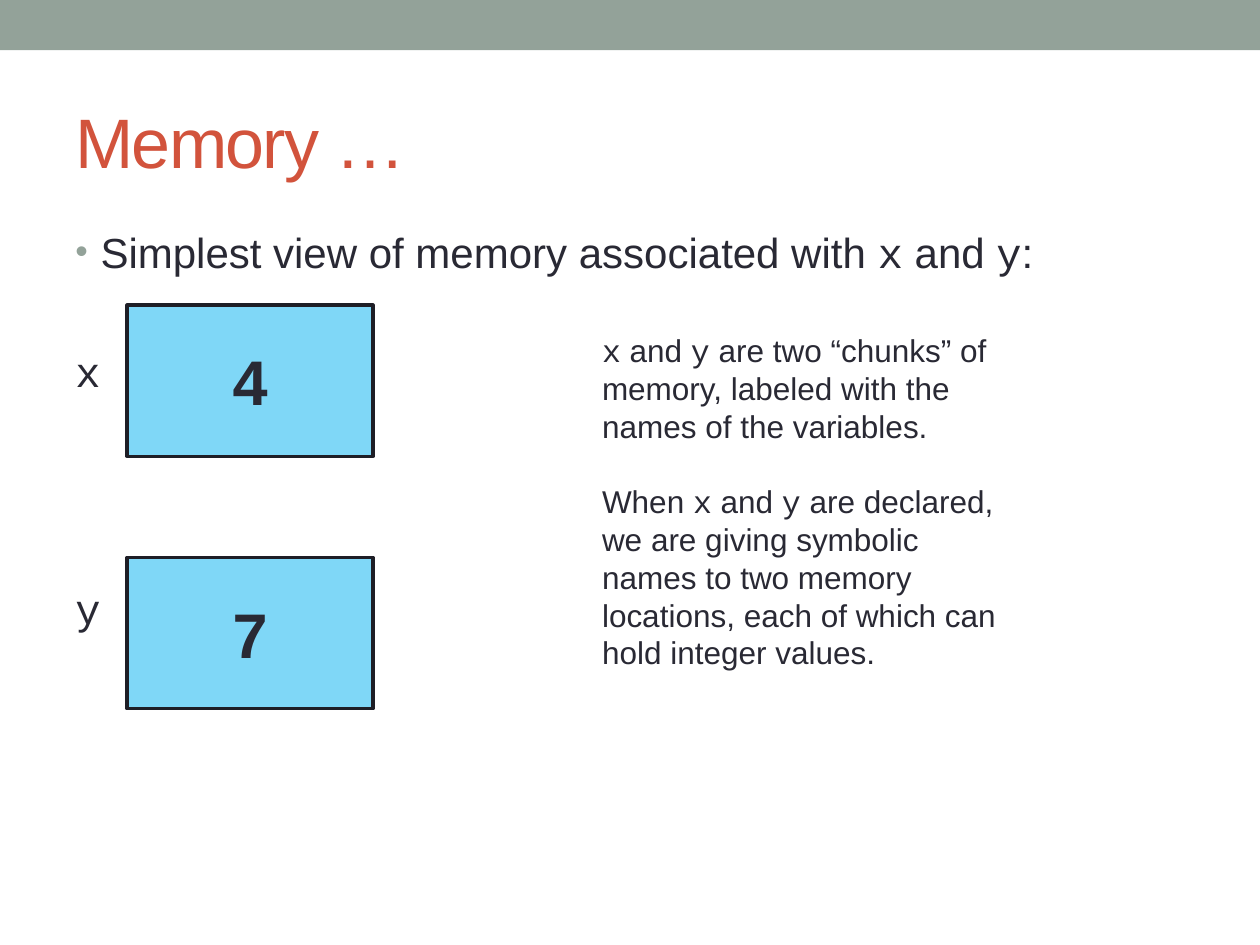
"""Build a slide that shows two variables as labeled chunks of memory."""
from dataclasses import dataclass

from pptx import Presentation, util as u
from pptx.dml.color import RGBColor
from pptx.enum import shapes, text
from pptx.oxml.ns import qn
from lxml import etree

WIDTH, HEIGHT = u.Inches(10), u.Inches(7.5)


@dataclass(frozen=True)
class Theme:
    band: str = "93A299"
    title: str = "D2533C"
    ink: str = "292934"
    cell: str = "00B0F0"
    edge: str = "1E1E26"
    sans: str = "Arial"
    mono: str = "Courier New"
    title_size: float = 40
    body_size: float = 24
    value_size: float = 36
    note_size: float = 18


@dataclass(frozen=True)
class Area:
    left: float
    top: float
    width: float
    height: float

    def lengths(self) -> tuple[int, ...]:
        shares = (self.left, self.top, self.width, self.height)
        return tuple(round(share * side) for share, side in zip(shares, (WIDTH, HEIGHT) * 2))


@dataclass(frozen=True)
class Para:
    pieces: tuple[str, ...]
    before: float = 0
    bullet: bool = False


@dataclass(frozen=True)
class Cell:
    value: str
    row: int


THEME = Theme()
VARIABLES = ("x", "y")
CELLS = (Cell("4", 0), Cell("7", 1))
CELL_AREA = Area(0.101, 0.323, 0.195, 0.16)
ROW_PITCH = 0.267
BODY = (
    Para(("Simplest view of memory associated with ", "x", " and ", "y", ":"), 2, True),
    Para(("x",), 39.5),
    Para(("y",), 106.5),
)
NOTES = (
    Para(("x", " and ", "y", " are two “chunks” of memory, labeled with the names of the variables.")),
    Para(("When ", "x", " and ", "y", " are declared, we are giving symbolic names to two memory "
          "locations, each of which can hold integer values."), 21.5),
)


def apply(target, values: dict) -> None:
    for name, value in values.items():
        setattr(target, name, value)


def add_span(para, words: str, size: float, color: str, bold: bool = False):
    span = para.add_run()
    font = THEME.mono if words in VARIABLES else THEME.sans
    apply(span, {"text": words})
    apply(span.font, {"name": font, "size": u.Pt(size), "bold": bold})
    span.font.color.rgb = RGBColor.from_string(color)
    return span


def add_bullet(para) -> None:
    props = para._p.get_or_add_pPr()
    apply_indent = {"marL": u.Inches(0.2), "indent": u.Inches(-0.2)}
    for name, value in apply_indent.items():
        props.set(name, str(int(value)))
    color = etree.SubElement(props, qn("a:buClr"))
    etree.SubElement(color, qn("a:srgbClr"), val=THEME.band)
    etree.SubElement(props, qn("a:buSzPct"), val="85000")
    etree.SubElement(props, qn("a:buFont"), typeface=THEME.sans)
    etree.SubElement(props, qn("a:buChar"), char="•")


def add_text(page, area: Area, paras: tuple[Para, ...], size: float, color: str = THEME.ink,
             anchor=text.MSO_ANCHOR.TOP):
    frame = page.shapes.add_textbox(*area.lengths()).text_frame
    apply(frame, {"word_wrap": True, "vertical_anchor": anchor})
    for index, item in enumerate(paras):
        para = frame.add_paragraph() if index else frame.paragraphs[0]
        para.space_before = u.Pt(item.before)
        if item.bullet:
            add_bullet(para)
        for words in item.pieces:
            add_span(para, words, size, color)
    return frame


def add_box(page, area: Area, color: str):
    box = page.shapes.add_shape(shapes.MSO_SHAPE.RECTANGLE, *area.lengths())
    box.shadow.inherit = False
    box.fill.solid()
    box.fill.fore_color.rgb = RGBColor.from_string(color)
    box.line.fill.background()
    return box


def add_cell(page, cell: Cell) -> None:
    base = CELL_AREA
    area = Area(base.left, base.top + cell.row * ROW_PITCH, base.width, base.height)
    box = add_box(page, area, THEME.cell)
    tint = box._element.spPr.find(qn("a:solidFill")).find(qn("a:srgbClr"))
    etree.SubElement(tint, qn("a:alpha"), val="50000")
    box.line.color.rgb = RGBColor.from_string(THEME.edge)
    box.line.width = u.Pt(2.08)
    box.text_frame.vertical_anchor = text.MSO_ANCHOR.MIDDLE
    para = box.text_frame.paragraphs[0]
    para.alignment = text.PP_ALIGN.CENTER
    add_span(para, cell.value, THEME.value_size, THEME.ink, True)


def main() -> None:
    deck = Presentation()
    apply(deck, {"slide_width": WIDTH, "slide_height": HEIGHT})
    page = deck.slides.add_slide(deck.slide_layouts[6])
    add_box(page, Area(0, 0, 1, 0.053), THEME.band)
    title = add_text(page, Area(0.05, 0.077, 0.9, 0.144), (Para(("Memory …",)),),
                     THEME.title_size, THEME.title, text.MSO_ANCHOR.MIDDLE)
    title.paragraphs[0].runs[0].font._element.set("spc", "-100")
    add_text(page, Area(0.05, 0.233, 0.9, 0.711), BODY, THEME.body_size)
    for cell in CELLS:
        add_cell(page, cell)
    add_text(page, Area(0.468, 0.344, 0.343, 0.377), NOTES, THEME.note_size)
    deck.save("out.pptx")


if __name__ == "__main__":
    main()
